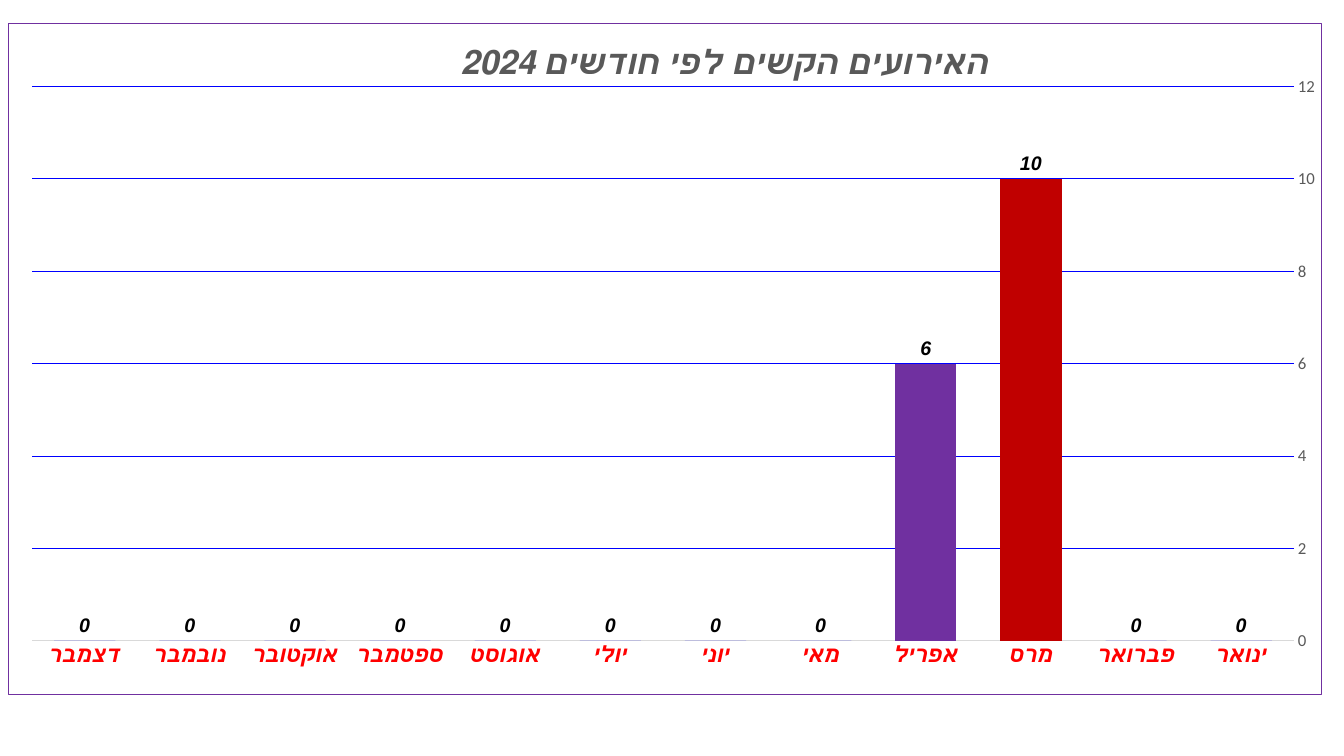
from lxml import etree
from pptx import Presentation
from pptx import util as u
from pptx.chart.data import CategoryChartData
from pptx.dml.color import RGBColor
from pptx.enum import chart as charts
from pptx.oxml import parse_xml
from pptx.oxml.ns import nsdecls, qn

EMU_PER_PX = 914400 / 100.8
COLORS = {
    "text": "595959", "label": "000000", "month": "FF0000",
    "grid": "0000FF", "axis": "D9D9D9", "border": "7030A0",
    "march": "C00000", "april": "7030A0",
}
EVENTS = {
    "ינואר": 0, "פברואר": 0, "מרס": 10, "אפריל": 6,
    "מאי": 0, "יוני": 0, "יולי": 0, "אוגוסט": 0,
    "ספטמבר": 0, "אוקטובר": 0, "נובמבר": 0, "דצמבר": 0,
}
HIGHLIGHTS = {"מרס": "march", "אפריל": "april"}


def px(count):
    return u.Emu(round(count * EMU_PER_PX))


def format_font(font, size, color, name="Arial", bold=True, italic=True):
    font.size, font.name = u.Pt(size), name
    font.bold, font.italic = bold, italic
    font.color.rgb = RGBColor.from_string(COLORS[color])


def format_line(line, color):
    line.color.rgb = RGBColor.from_string(COLORS[color])
    line.width = u.Pt(0.75)


def manual_layout(**values):
    """Return a chart layout whose settings follow the given order."""
    layout = parse_xml(f"<c:layout {nsdecls('c')}><c:manualLayout/></c:layout>")
    for name, value in values.items():
        etree.SubElement(layout[0], qn(f"c:{name}")).set("val", str(value))
    return layout


def drop_layout(parent):
    for layout in parent.findall(qn("c:layout")):
        parent.remove(layout)


class MonthlyPage:
    def __init__(self, deck):
        self.page = deck.slides.add_slide(deck.slide_layouts[6])

    def add_columns(self, left, top, width, height, events):
        data = CategoryChartData()
        data.categories = list(events)
        data.add_series("Series 1", list(events.values()))
        frame = self.page.shapes.add_chart(
            charts.XL_CHART_TYPE.COLUMN_CLUSTERED,
            px(left), px(top), px(width), px(height), data)
        chart = frame.chart
        chart.has_legend = False
        format_font(chart.font, 10, "label", "Calibri", False, False)
        plot = chart.plots[0]
        plot.gap_width, plot.overlap = 72, -27
        plot.vary_by_categories = False
        area = chart._chartSpace.chart.plotArea
        drop_layout(area)
        area.insert(0, manual_layout(
            layoutTarget="inner", xMode="edge", yMode="edge",
            x=0.018, y=0.094, w=0.961, h=0.826))
        return chart

    def add_title(self, chart, title):
        chart.has_title = True
        para = chart.chart_title.text_frame.paragraphs[0]
        span = para.add_run()
        span.text = title
        format_font(span.font, 24, "text")
        para._p.get_or_add_pPr().set("rtl", "1")
        element = chart.chart_title._element
        drop_layout(element)
        element.find(qn("c:tx")).addnext(
            manual_layout(xMode="edge", yMode="edge", x=0.34, y=0.02))

    def style_axes(self, chart):
        months, counts = chart.category_axis, chart.value_axis
        for axis in (months, counts):
            axis.major_tick_mark = charts.XL_TICK_MARK.NONE
            axis.minor_tick_mark = charts.XL_TICK_MARK.NONE
        months.reverse_order = True
        format_font(months.tick_labels.font, 16, "month")
        format_line(months.format.line, "axis")
        counts.minimum_scale, counts.maximum_scale, counts.major_unit = 0, 12, 2
        format_font(counts.tick_labels.font, 12, "text", "Calibri", False, False)
        counts.format.line.fill.background()
        format_line(counts.major_gridlines.format.line, "grid")

    def style_series(self, chart, highlights):
        series = chart.plots[0].series[0]
        series.invert_if_negative = False
        fills = [(series, "grid")]
        fills += [(series.points[list(EVENTS).index(month)], color)
                  for month, color in highlights.items()]
        for item, color in fills:
            item.format.fill.solid()
            item.format.fill.fore_color.rgb = RGBColor.from_string(COLORS[color])
        labels = series.data_labels
        labels.show_value = True
        labels.position = charts.XL_LABEL_POSITION.OUTSIDE_END
        format_font(labels.font, 14, "label")

    def add_border(self, chart):
        chart._chartSpace.chart.addnext(parse_xml(
            f"<c:spPr {nsdecls('c', 'a')}><a:noFill/>"
            f'<a:ln w="{u.Pt(0.75)}"><a:solidFill>'
            f'<a:srgbClr val="{COLORS["border"]}"/>'
            "</a:solidFill></a:ln></c:spPr>"))


def main():
    deck = Presentation()
    deck.slide_width, deck.slide_height = px(1344), px(756)
    monthly = MonthlyPage(deck)

    # Chart with its frame and heading
    chart = monthly.add_columns(8, 23, 1314, 672, EVENTS)
    monthly.add_border(chart)
    monthly.add_title(chart, "האירועים הקשים לפי חודשים 2024")

    # Axes, columns and labels
    monthly.style_axes(chart)
    monthly.style_series(chart, HIGHLIGHTS)
    deck.save("out.pptx")


if __name__ == "__main__":
    main()
